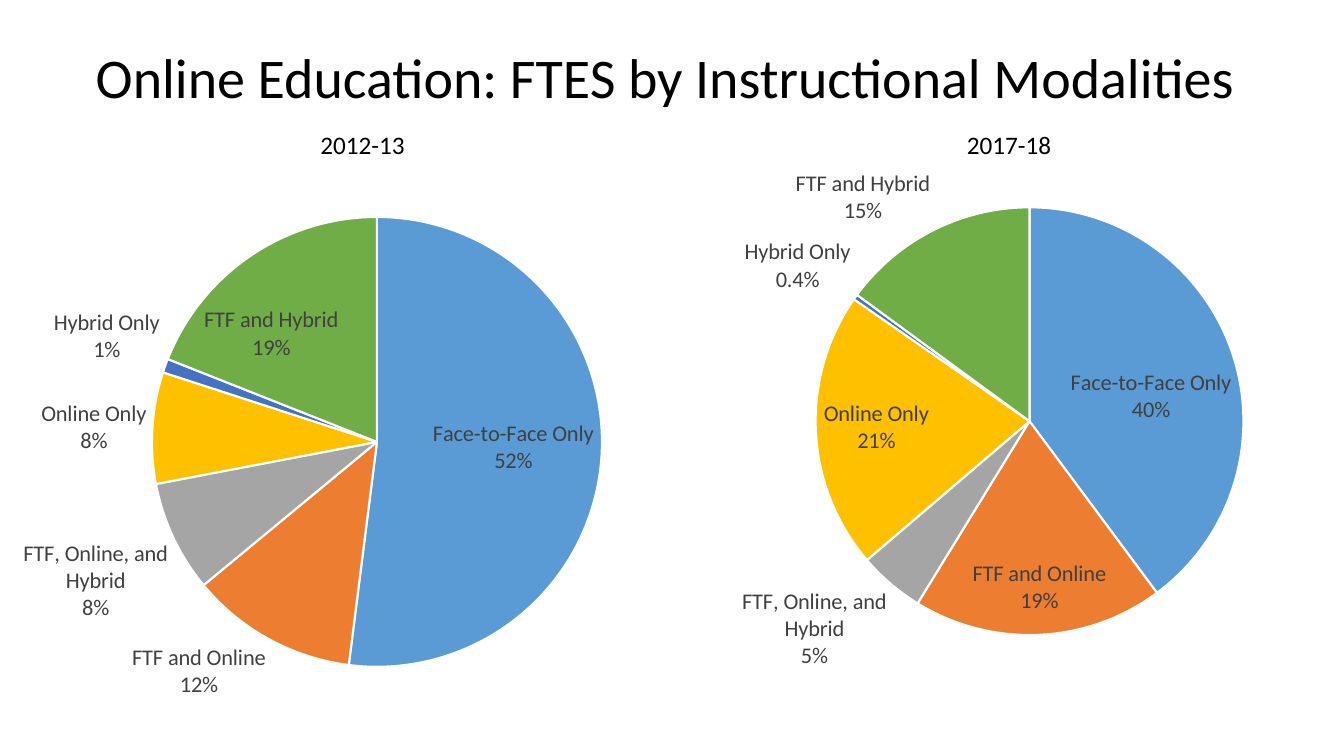
from dataclasses import dataclass

from lxml import etree
from pptx import Presentation
from pptx.chart.data import CategoryChartData
from pptx.dml.color import RGBColor
from pptx.enum.chart import XL_CHART_TYPE as ChartType, XL_LABEL_POSITION as LabelPosition
from pptx.enum.text import MSO_ANCHOR as Anchor, PP_ALIGN as Align
from pptx.oxml.ns import qn
from pptx.util import Inches, Pt

FONT = "Calibri"
BLACK = RGBColor(0x00, 0x00, 0x00)
LABEL_GRAY = RGBColor(0x40, 0x40, 0x40)
WHITE = RGBColor(0xFF, 0xFF, 0xFF)
MODALITY_COLORS = {
    "Face-to-Face Only": RGBColor(0x5B, 0x9B, 0xD5),
    "FTF and Online": RGBColor(0xED, 0x7D, 0x31),
    "FTF, Online, and Hybrid": RGBColor(0xA5, 0xA5, 0xA5),
    "Online Only": RGBColor(0xFF, 0xC0, 0x00),
    "Hybrid Only": RGBColor(0x44, 0x72, 0xC4),
    "FTF and Hybrid": RGBColor(0x70, 0xAD, 0x47),
}


@dataclass
class Box:
    left: float
    top: float
    width: float
    height: float

    def inches(self) -> tuple:
        return tuple(Inches(v) for v in (self.left, self.top, self.width, self.height))


@dataclass
class YearPie:
    year: str
    year_box: Box
    chart_box: Box
    plot: Box  # fractions of the chart area
    shares: tuple
    exact_labels: dict  # slice index to label text


YEAR_PIES = [
    YearPie("2012-13", Box(3.08, 1.23, 1.05, 0.4), Box(-0.45, 1.63, 7.83, 5.51),
            Box(0.25, 0.09, 0.57, 0.82), (52, 12, 8, 8, 1, 19), {}),
    YearPie("2017-18", Box(9.49, 1.23, 1.05, 0.4), Box(6.05, 1.44, 8.16, 5.59),
            Box(0.25, 0.11, 0.52, 0.76), (40, 19, 5, 21, 0.4, 15),
            {4: "Hybrid Only\n0.4%"}),
]


def style_font(font, size: float, color: RGBColor) -> None:
    font.name = FONT
    font.size = Pt(size)
    font.color.rgb = color


def add_text(slide, text: str, box: Box, size: float, wrap: bool = False):
    """Add a one-paragraph text box and return its paragraph."""
    frame = slide.shapes.add_textbox(*box.inches()).text_frame
    frame.word_wrap = wrap
    frame.vertical_anchor = Anchor.MIDDLE
    paragraph = frame.paragraphs[0]
    paragraph.text = text
    style_font(paragraph.font, size, BLACK)
    return paragraph


def set_plot_layout(chart, plot: Box) -> None:
    """Fix the inner plot area, which python-pptx has no method for."""
    area = chart.plots[0]._element.getparent()
    for old in area.findall(qn("c:layout")):
        area.remove(old)
    layout = etree.Element(qn("c:layout"))
    area.insert(0, layout)
    manual = etree.SubElement(layout, qn("c:manualLayout"))
    settings = {"layoutTarget": "inner", "xMode": "edge", "yMode": "edge",
                "x": plot.left, "y": plot.top, "w": plot.width, "h": plot.height}
    for tag, value in settings.items():
        etree.SubElement(manual, qn(f"c:{tag}")).set("val", str(value))


def add_pie(slide, pie: YearPie) -> None:
    data = CategoryChartData()
    data.categories = list(MODALITY_COLORS)
    data.add_series("Series 1", pie.shares)
    chart = slide.shapes.add_chart(ChartType.PIE, *pie.chart_box.inches(), data).chart
    chart.has_legend = False
    chart.has_title = False
    style_font(chart.font, 16, BLACK)
    set_plot_layout(chart, pie.plot)

    plot = chart.plots[0]
    plot.vary_by_categories = True
    series = plot.series[0]
    for index, color in enumerate(MODALITY_COLORS.values()):
        wedge = series.points[index].format
        wedge.fill.solid()
        wedge.fill.fore_color.rgb = color
        wedge.line.color.rgb = WHITE
        wedge.line.width = Pt(1.5)

    labels = series.data_labels
    labels.show_value = False
    labels.show_category_name = True
    labels.show_percentage = True
    labels.number_format = "0%"
    labels.number_format_is_linked = False
    labels.position = LabelPosition.BEST_FIT
    style_font(labels.font, 16, LABEL_GRAY)
    for index, text in pie.exact_labels.items():
        label = series.points[index].data_label
        label.text_frame.text = text
        label.position = LabelPosition.BEST_FIT
        for paragraph in label.text_frame.paragraphs:
            for run in paragraph.runs:
                style_font(run.font, 16, LABEL_GRAY)


def main() -> None:
    deck = Presentation()
    deck.slide_width, deck.slide_height = Inches(13.33), Inches(7.5)
    slide = deck.slides.add_slide(deck.slide_layouts[6])
    for pie in YEAR_PIES:
        add_pie(slide, pie)
    title = add_text(slide, "Online Education: FTES by Instructional Modalities",
                     Box(0.33, 0.36, 12.53, 0.87), 40, wrap=True)
    title.alignment = Align.CENTER
    title.line_spacing = 0.9
    for pie in YEAR_PIES:
        add_text(slide, pie.year, pie.year_box, 18)
    deck.save("out.pptx")


if __name__ == "__main__":
    main()
